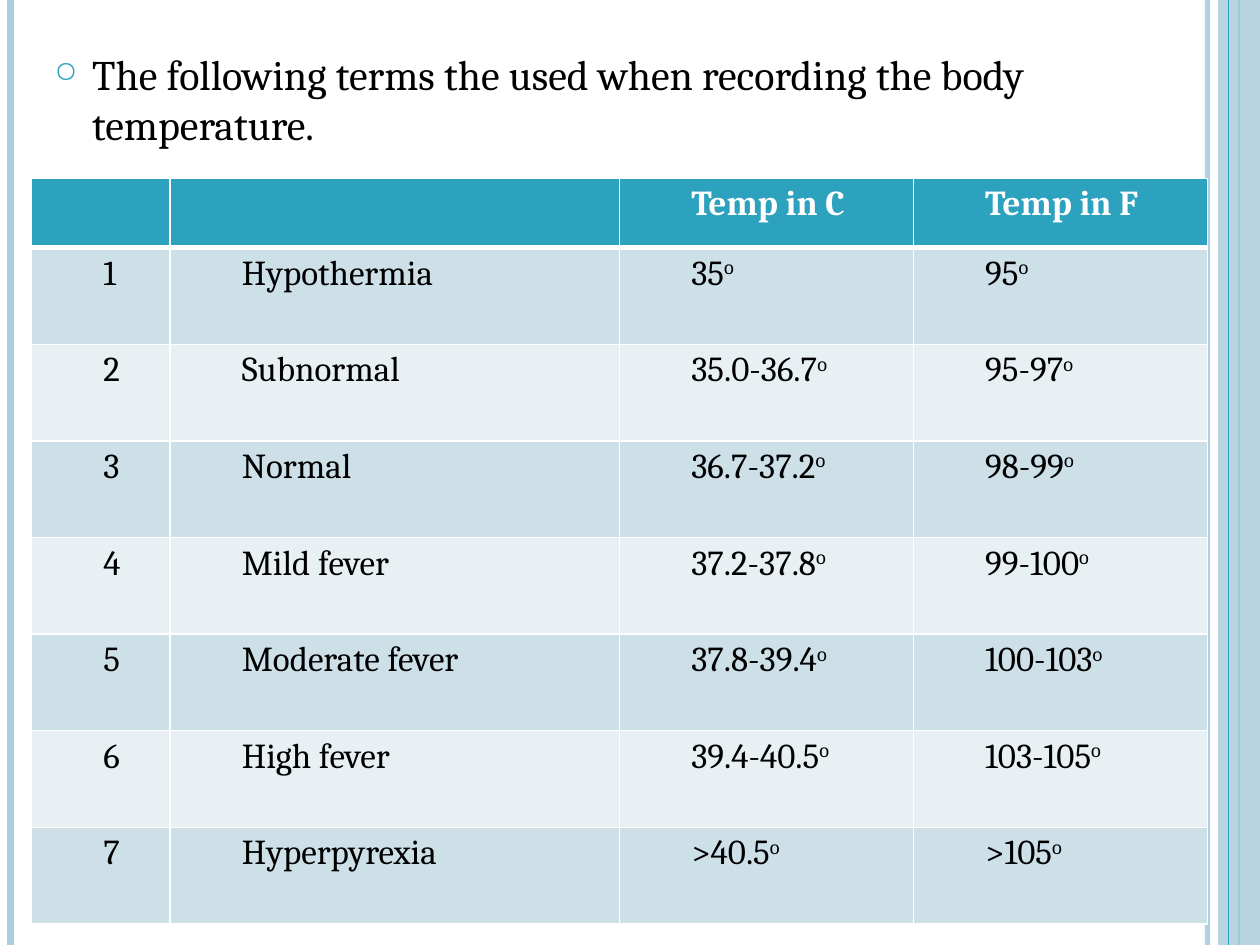
from dataclasses import dataclass
from typing import Any

from lxml import etree
from pptx import Presentation
from pptx import util as u
from pptx.dml.color import RGBColor
from pptx.enum import shapes
from pptx.oxml.ns import qn

# Page grid: 120 columns by 90 rows
WIDE, HIGH = 10, 7.5
COLS, ROWS = 120, 90

TEAL, PALE = "2DA2BF", "ADCEDC"
BANDS = ["CDE0E8", "E8F0F4"]
WHITE, BLACK = "FFFFFF", "000000"

NOTE = "The following terms the used when recording the body temperature."
HEAD = ["", "", "Temp in C", "Temp in F"]
TERMS = [
    ("Hypothermia", "35", "95"),
    ("Subnormal", "35.0-36.7", "95-97"),
    ("Normal", "36.7-37.2", "98-99"),
    ("Mild fever", "37.2-37.8", "99-100"),
    ("Moderate fever", "37.8-39.4", "100-103"),
    ("High fever", "39.4-40.5", "103-105"),
    ("Hyperpyrexia", ">40.5", ">105"),
]


def paint(code):
    return RGBColor.from_string(code)


def col(n):
    return u.Inches(n * WIDE / COLS)


def row(n):
    return u.Inches(n * HIGH / ROWS)


def put(item, **vals):
    for key, val in vals.items():
        setattr(item, key, val)


def node(base, tag, **attrs):
    part = etree.SubElement(base, qn(tag))
    for key, val in attrs.items():
        part.set(key, str(val))
    return part


def fade(item, share):
    tone = next(item.iter(qn("a:srgbClr")))
    node(tone, "a:alpha", val=share * 1000)


@dataclass
class Page:
    slide: Any
    font: str = "Cambria"

    def words(self, para, words, size, tone=BLACK, bold=False, lift=False):
        run = para.add_run()
        run.text = words
        put(run.font, name=self.font, size=u.Pt(size), bold=bold)
        run.font.color.rgb = paint(tone)
        if lift:
            run.font._element.set("baseline", "30000")

    def rule(self, x, tone, width, share=100):
        line = self.slide.shapes.add_connector(
            shapes.MSO_CONNECTOR.STRAIGHT, col(x), 0, col(x), row(ROWS))
        line.line.width = u.Pt(width)
        line.line.color.rgb = paint(tone)
        node(line._element.spPr, "a:effectLst")
        if share < 100:
            fade(line._element, share)

    def band(self, x, wide, tone, share):
        box = self.slide.shapes.add_shape(
            shapes.MSO_SHAPE.RECTANGLE, col(x), 0, col(wide), row(ROWS))
        box.shadow.inherit = False
        box.fill.solid()
        box.fill.fore_color.rgb = paint(tone)
        box.line.fill.background()
        fade(box._element, share)

    def bullet(self, x, y, wide, high, words):
        box = self.slide.shapes.add_textbox(col(x), row(y), col(wide), row(high))
        box.text_frame.word_wrap = True
        para = box.text_frame.paragraphs[0]
        para.space_before = u.Pt(6)
        props = para._p.get_or_add_pPr()
        props.set("marL", str(u.Inches(0.3)))
        props.set("indent", str(-u.Inches(0.3)))
        node(node(props, "a:buClr"), "a:srgbClr", val=TEAL)
        node(props, "a:buSzPct", val=70000)
        node(props, "a:buChar", char="○")
        self.words(para, words, 24)

    def edges(self, cell, top, base):
        props = cell._tc.get_or_add_tcPr()
        for side, width in zip("LRTB", (1, 1, top, base)):
            line = node(props, f"a:ln{side}", w=u.Pt(width))
            node(node(line, "a:solidFill"), "a:srgbClr", val=WHITE)

    def cell(self, cell, words, fill, top=1, base=1, lift=False, **style):
        self.edges(cell, top, base)
        cell.fill.solid()
        cell.fill.fore_color.rgb = paint(fill)
        put(cell, margin_left=u.Inches(0.07), margin_right=u.Inches(0.07),
            margin_top=0, margin_bottom=0)
        para = cell.text_frame.paragraphs[0]
        para.line_spacing = 1.15
        para._p.get_or_add_pPr().set("marL", str(u.Inches(0.5)))
        if words:
            self.words(para, words, 20, **style)
        if lift:
            self.words(para, "o", 20, lift=True)

    def table(self, x, y, wides, highs):
        grid = self.slide.shapes.add_table(
            len(highs), len(wides), col(x), row(y),
            col(sum(wides)), row(sum(highs))).table
        for part, wide in zip(grid.columns, wides):
            part.width = col(wide)
        for part, high in zip(grid.rows, highs):
            part.height = row(high)
        # Header row, with a thick rule below it
        for c, words in enumerate(HEAD):
            self.cell(grid.cell(0, c), words, TEAL, base=3, tone=WHITE, bold=True)
        # Numbered terms; the two temperature columns end in a raised "o"
        for r, term in enumerate(TERMS, 1):
            for c, words in enumerate((str(r), *term)):
                self.cell(grid.cell(r, c), words, BANDS[(r - 1) % 2],
                          top=3 if r == 1 else 1, lift=c > 1)


def main():
    deck = Presentation()
    put(deck, slide_width=u.Inches(WIDE), slide_height=u.Inches(HIGH))
    page = Page(deck.slides.add_slide(deck.slide_layouts[6]))

    # Side stripes
    page.rule(115, PALE, 3, 93)
    page.rule(1, PALE, 4.5)
    page.rule(118, TEAL, 1.5)
    page.band(116, 4, PALE, 87)
    page.rule(117, TEAL, 0.75)

    # Opening line and table of terms
    page.bullet(4, 4, 110, 81, NOTE)
    page.table(3, 17, [13.2, 42.8, 28, 28], [6.6] + [9.2] * len(TERMS))

    deck.save("out.pptx")


if __name__ == "__main__":
    main()
